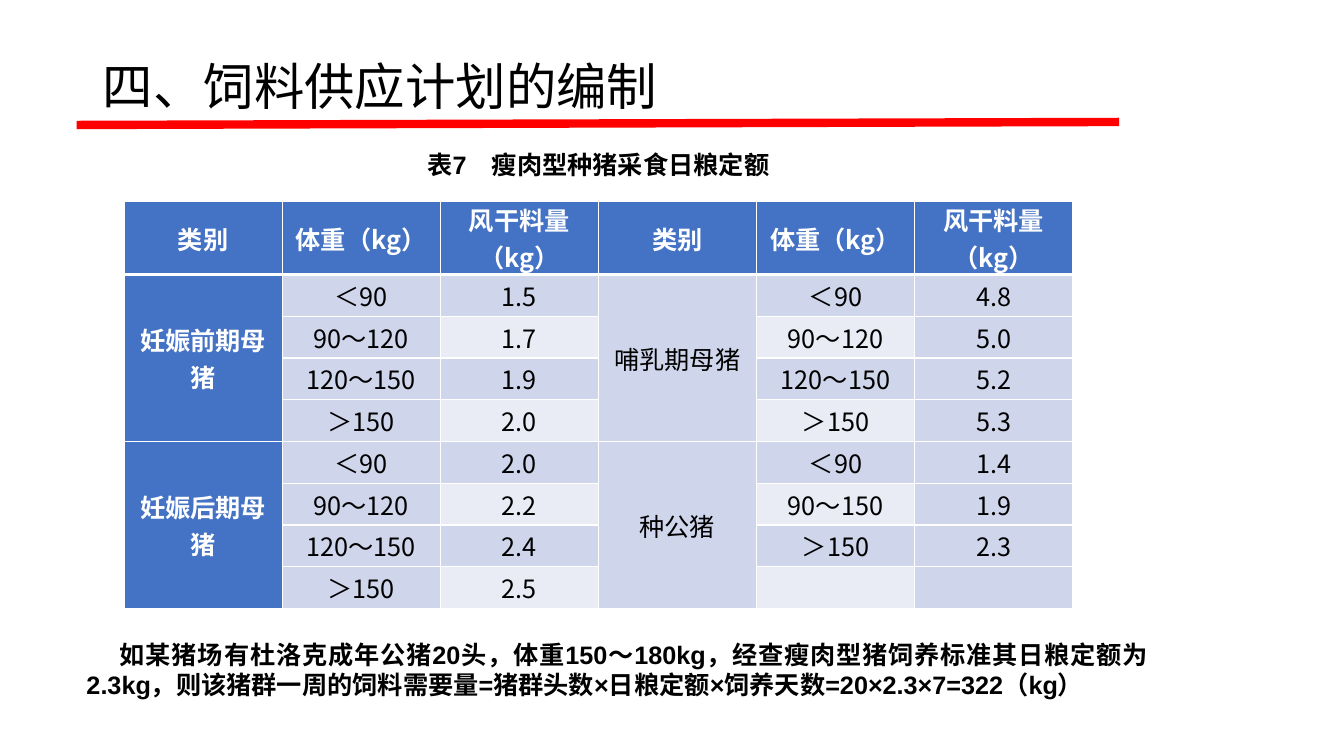
import dataclasses

import pptx
import pptx.dml.color
import pptx.enum.shapes
import pptx.enum.text
import pptx.oxml
import pptx.oxml.ns
import pptx.util
from pptx.util import Inches

ALIGN = pptx.enum.text.PP_ALIGN
MIDDLE = pptx.enum.text.MSO_ANCHOR.MIDDLE


@dataclasses.dataclass(frozen=True)
class Theme:
    black: str = "000000"
    white: str = "FFFFFF"
    red: str = "FF0000"
    header: str = "4472C4"
    band_dark: str = "CFD5EA"
    band_light: str = "E9EBF5"
    title_size: int = 36
    text_size: int = 18
    chinese_font: str = "Noto Sans CJK SC"
    latin_font: str = "Arial"


THEME = Theme()

# Table content: each group fills four rows of (weight, feed)
HEADINGS = ["类别", "体重（kg）", "风干料量（kg）"] * 2
LEFT_GROUPS = [
    ("妊娠前期母猪", [("＜90", "1.5"), ("90～120", "1.7"), ("120～150", "1.9"), ("＞150", "2.0")]),
    ("妊娠后期母猪", [("＜90", "2.0"), ("90～120", "2.2"), ("120～150", "2.4"), ("＞150", "2.5")]),
]
RIGHT_GROUPS = [
    ("哺乳期母猪", [("＜90", "4.8"), ("90～120", "5.0"), ("120～150", "5.2"), ("＞150", "5.3")]),
    ("种公猪", [("＜90", "1.4"), ("90～150", "1.9"), ("＞150", "2.3"), ("", "")]),
]
GROUP_ROWS = 4
EXAMPLE = (
    "如某猪场有杜洛克成年公猪20头，体重150～180kg，经查瘦肉型猪饲养标准其日粮定额为2.3kg，"
    "则该猪群一周的饲料需要量=猪群头数×日粮定额×饲养天数=20×2.3×7=322（kg）"
)


def rgb(color):
    return pptx.dml.color.RGBColor.from_string(color)


def format_text(paragraph, size, color, bold, align, latin, east_asian):
    paragraph.alignment = align
    for run in paragraph.runs:
        run.font.size = pptx.util.Pt(size)
        run.font.bold = bold
        run.font.color.rgb = rgb(color)
        run.font.name = latin
        typeface = run.font._element.makeelement(
            pptx.oxml.ns.qn("a:ea"), {"typeface": east_asian})
        run.font._element.find(pptx.oxml.ns.qn("a:latin")).addnext(typeface)


def add_title(slide, text):
    title = slide.shapes.title
    title.left, title.top = Inches(0.92), Inches(0.4)
    title.width, title.height = Inches(11.5), Inches(0.96)
    frame = title.text_frame
    frame.text = text
    frame.auto_size = pptx.enum.text.MSO_AUTO_SIZE.NONE
    frame.vertical_anchor = MIDDLE
    frame.paragraphs[0].line_spacing = 0.9
    format_text(frame.paragraphs[0], THEME.title_size, THEME.black, False,
                ALIGN.LEFT, THEME.chinese_font, THEME.chinese_font)


def add_title_rule(slide):
    rule = slide.shapes.add_connector(
        pptx.enum.shapes.MSO_CONNECTOR.STRAIGHT,
        Inches(0.76), Inches(1.24), Inches(11.1), Inches(1.21))
    rule.line.color.rgb = rgb(THEME.red)
    rule.line.width = pptx.util.Pt(6)
    properties = rule._element.spPr
    properties.append(properties.makeelement(pptx.oxml.ns.qn("a:effectLst"), {}))


def add_bold_text(slide, text, left, top, width, height, align, first_indent=0):
    box = slide.shapes.add_textbox(
        Inches(left), Inches(top), Inches(width), Inches(height))
    frame = box.text_frame
    frame.word_wrap = True
    frame.text = text
    paragraph = frame.paragraphs[0]
    if first_indent:
        paragraph._p.get_or_add_pPr().set("indent", str(Inches(first_indent)))
    format_text(paragraph, THEME.text_size, THEME.black, True, align,
                THEME.latin_font, THEME.latin_font)


def set_borders(cell, row):
    widths = {"L": 1, "R": 1, "T": 3 if row == 1 else 1, "B": 3 if row == 0 else 1}
    namespace = pptx.oxml.ns.nsdecls("a")
    for side, width in widths.items():
        cell._tc.get_or_add_tcPr().append(pptx.oxml.parse_xml(
            f'<a:ln{side} {namespace} w="{pptx.util.Pt(width)}"><a:solidFill>'
            f'<a:srgbClr val="{THEME.white}"/></a:solidFill></a:ln{side}>'))


def cell_fill(row, column):
    if row == 0 or column == 0:
        return THEME.header
    if column in (2, 4) and row % 2 == 0:
        return THEME.band_light
    return THEME.band_dark


def format_cell(cell, row, column):
    set_borders(cell, row)
    cell.fill.solid()
    cell.fill.fore_color.rgb = rgb(cell_fill(row, column))
    cell.vertical_anchor = MIDDLE
    cell.margin_left = cell.margin_right = Inches(0.07)
    cell.margin_top = cell.margin_bottom = 0
    heading = row == 0 or column == 0
    format_text(cell.text_frame.paragraphs[0], THEME.text_size,
                THEME.white if heading else THEME.black, heading,
                ALIGN.CENTER, THEME.chinese_font, THEME.chinese_font)


def fill_groups(table, groups, first_column):
    for index, (name, values) in enumerate(groups):
        first_row = 1 + index * GROUP_ROWS
        top_cell = table.cell(first_row, first_column)
        top_cell.merge(table.cell(first_row + GROUP_ROWS - 1, first_column))
        top_cell.text = name
        for row, (weight, feed) in enumerate(values, first_row):
            table.cell(row, first_column + 1).text = weight
            table.cell(row, first_column + 2).text = feed


def add_ration_table(slide):
    row_count = 1 + GROUP_ROWS * len(LEFT_GROUPS)
    table = slide.shapes.add_table(
        row_count, len(HEADINGS), Inches(1.23), Inches(2),
        Inches(9.41), Inches(3.73)).table
    table.horz_banding = False
    for column, heading in enumerate(HEADINGS):
        table.cell(0, column).text = heading
    fill_groups(table, LEFT_GROUPS, 0)
    fill_groups(table, RIGHT_GROUPS, 3)
    for row in range(row_count):
        for column in range(len(HEADINGS)):
            format_cell(table.cell(row, column), row, column)


def main():
    presentation = pptx.Presentation()
    presentation.slide_width = Inches(13.33)
    presentation.slide_height = Inches(7.5)
    slide = presentation.slides.add_slide(presentation.slide_layouts[5])

    # Heading
    add_title_rule(slide)
    add_title(slide, "四、饲料供应计划的编制")

    # Table with its caption
    add_ration_table(slide)
    add_bold_text(slide, "表7　瘦肉型种猪采食日粮定额",
                  2.6, 1.43, 6.67, 0.4, ALIGN.CENTER)

    # Worked example
    add_bold_text(slide, EXAMPLE, 0.76, 6.29, 10.73, 0.71,
                  ALIGN.JUSTIFY, first_indent=0.33)

    presentation.save("out.pptx")


if __name__ == "__main__":
    main()
